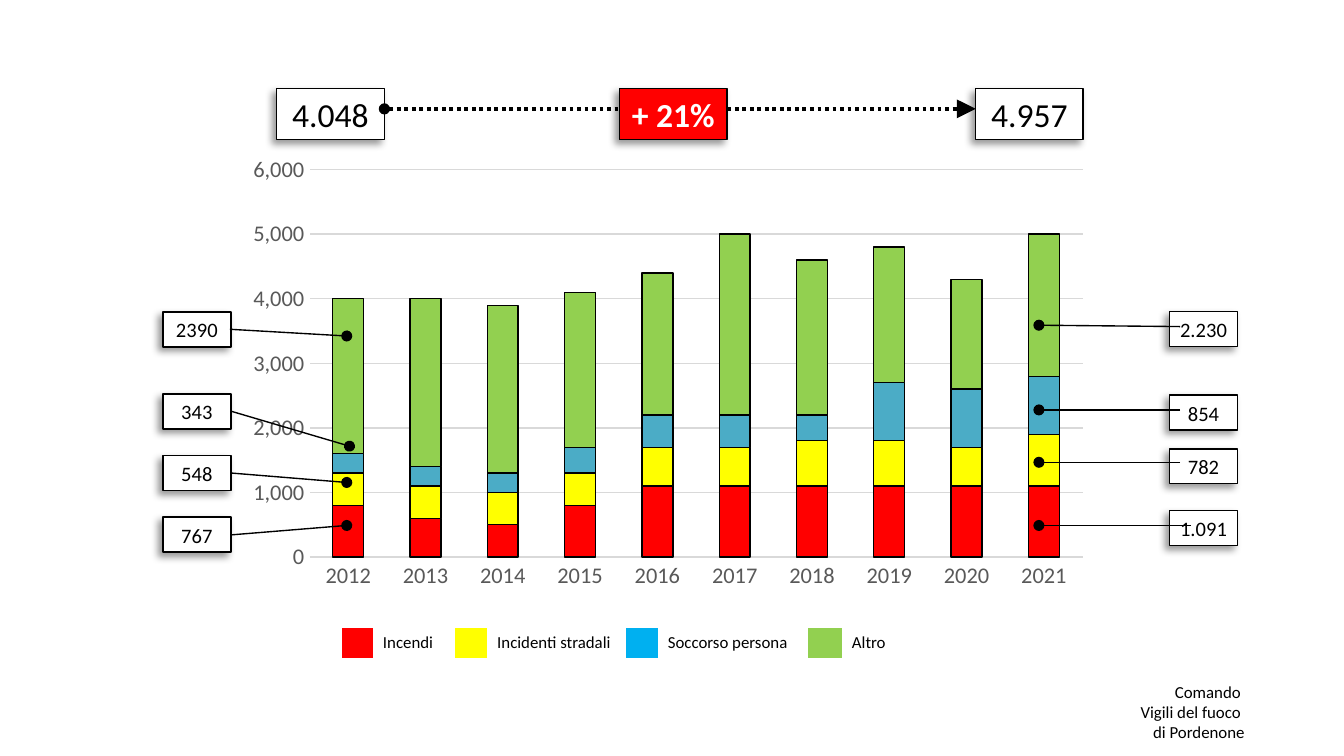
import pptx
import pptx.util
import pptx.chart.data
import pptx.dml.color
import pptx.enum.chart
import pptx.enum.dml
import pptx.enum.shapes
import pptx.enum.text
import pptx.oxml
import pptx.oxml.ns

Inches = pptx.util.Inches
Pt = pptx.util.Pt
RGBColor = pptx.dml.color.RGBColor
ALIGN = pptx.enum.text.PP_ALIGN
qn = pptx.oxml.ns.qn

FONT = "Calibri"
BLACK = RGBColor(0, 0, 0)
WHITE = RGBColor(255, 255, 255)
RED = RGBColor(255, 0, 0)
YELLOW = RGBColor(255, 255, 0)
TEAL = RGBColor(0x4B, 0xAC, 0xC6)
SKY = RGBColor(0x00, 0xB0, 0xF0)
GREEN = RGBColor(0x92, 0xD0, 0x50)
AXIS_TEXT = RGBColor(0x59, 0x59, 0x59)
GRID = RGBColor(0xD9, 0xD9, 0xD9)

YEARS = [str(year) for year in range(2012, 2022)]
INTERVENTIONS = [
    ("Series 1", RED, [800, 600, 500, 800, 1100, 1100, 1100, 1100, 1100, 1100]),
    ("Series 2", YELLOW, [500, 500, 500, 500, 600, 600, 700, 700, 600, 800]),
    ("Series 3", TEAL, [300, 300, 300, 400, 500, 500, 400, 900, 900, 900]),
    ("Series 4", GREEN, [2400, 2600, 2600, 2400, 2200, 2800, 2400, 2100, 1700, 2200]),
]
# Legend: label, colour, width of the colour cell, width of the label cell
LEGEND = [("Incendi", RED, 0.24, 0.6), ("Incidenti stradali", YELLOW, 0.25, 1.02),
          ("Soccorso persona", SKY, 0.25, 1.11), ("Altro", GREEN, 0.26, 1.56)]

# Callouts: text, box top, line start (x, y), dot (x, y)
CALLOUTS_2012 = [
    ("2390", 2.32, (1.71, 2.45), (2.58, 2.5)),
    ("343", 2.93, (1.72, 3.06), (2.6, 3.32)),
    ("548", 3.39, (1.72, 3.52), (2.58, 3.59)),
    ("767", 3.85, (1.72, 3.98), (2.58, 3.91)),
]
CALLOUTS_2021 = [
    ("2.230", 2.32, (8.78, 2.43), (7.73, 2.42)),
    ("854", 2.94, (8.78, 3.05), (7.73, 3.05)),
    ("782", 3.34, (8.78, 3.44), (7.73, 3.44)),
    ("1.091", 3.8, (8.86, 3.91), (7.73, 3.91)),
]


def style_font(font, size, color, bold=False):
    font.name, font.size, font.bold = FONT, Pt(size), bold
    font.color.rgb = color


def set_margins(holder):
    holder.margin_left = holder.margin_right = Inches(0.07)
    holder.margin_top = holder.margin_bottom = Inches(0.04)


def write_text(frame, text, size, color=BLACK, align=ALIGN.LEFT, bold=False):
    frame.text = text
    for paragraph in frame.paragraphs:
        paragraph.alignment = align
        for run in paragraph.runs:
            style_font(run.font, size, color, bold)


def add_chart(slide):
    data = pptx.chart.data.CategoryChartData()
    data.categories = YEARS
    for name, _, values in INTERVENTIONS:
        data.add_series(name, values)
    chart = slide.shapes.add_chart(
        pptx.enum.chart.XL_CHART_TYPE.COLUMN_STACKED,
        Inches(1.72), Inches(1.16), Inches(6.34), Inches(3.31), data).chart
    chart.has_legend = chart.has_title = False
    style_font(chart.font, 12, BLACK)

    plot = chart.plots[0]
    plot.overlap, plot.gap_width, plot.vary_by_categories = 100, 150, False
    for series, (_, color, _) in zip(plot.series, INTERVENTIONS):
        series.format.fill.solid()
        series.format.fill.fore_color.rgb = color
        series.format.line.color.rgb = BLACK
        series.format.line.width = Pt(0.75)

    # Axes
    years, counts = chart.category_axis, chart.value_axis
    for axis in (years, counts):
        style_font(axis.tick_labels.font, 12, AXIS_TEXT)
        axis.major_tick_mark = pptx.enum.chart.XL_TICK_MARK.NONE
        axis.minor_tick_mark = pptx.enum.chart.XL_TICK_MARK.NONE
    counts.minimum_scale, counts.maximum_scale, counts.major_unit = 0, 6000, 1000
    counts.tick_labels.number_format = "#,##0"
    counts.tick_labels.number_format_is_linked = False
    counts.format.line.fill.background()
    for line in (years.format.line, counts.major_gridlines.format.line):
        line.color.rgb = GRID
        line.width = Pt(0.75)

    # Position of the plot area inside the chart
    plot_area = plot._element.getparent()
    for old in plot_area.findall(qn("c:layout")):
        plot_area.remove(old)
    plot_area.insert(0, pptx.oxml.parse_xml(
        f'<c:layout {pptx.oxml.ns.nsdecls("c")}><c:manualLayout>'
        '<c:layoutTarget val="inner"/><c:xMode val="edge"/><c:yMode val="edge"/>'
        '<c:x val="0.097"/><c:y val="0.031"/><c:w val="0.908"/><c:h val="0.871"/>'
        '</c:manualLayout></c:layout>'))


def add_legend(slide):
    widths = [width for _, _, *pair in LEGEND for width in pair]
    table = slide.shapes.add_table(1, len(widths), Inches(2.54), Inches(4.67),
                                   Inches(sum(widths)), Inches(0.23)).table
    table.first_row = table.horz_banding = False
    for column, width in zip(table.columns, widths):
        column.width = Inches(width)
    for i, (label, color, *_) in enumerate(LEGEND):
        for col, text, fill in ((2 * i, "", color), (2 * i + 1, label, WHITE)):
            cell = table.cell(0, col)
            set_margins(cell)
            cell.fill.solid()
            cell.fill.fore_color.rgb = fill
            write_text(cell.text_frame, text, 9)
            # Keeps the colour cells as low as the label cells
            end = cell.text_frame.paragraphs[0]._p.get_or_add_endParaRPr()
            end.set("sz", "900")


def add_box(slide, text, left, top, width, height, size,
            fill=WHITE, color=BLACK, bold=False, line_width=0.75):
    box = slide.shapes.add_shape(pptx.enum.shapes.MSO_SHAPE.RECTANGLE, Inches(left),
                                 Inches(top), Inches(width), Inches(height))
    box.fill.solid()
    box.fill.fore_color.rgb = fill
    box.line.color.rgb = BLACK
    box.line.width = Pt(line_width)
    box.shadow.inherit = False
    box._element.spPr.find(qn("a:effectLst")).append(pptx.oxml.parse_xml(
        f'<a:outerShdw {pptx.oxml.ns.nsdecls("a")} blurRad="{Pt(4)}" dist="{Pt(3)}" '
        'dir="8100000" algn="tr" rotWithShape="0"><a:srgbClr val="000000">'
        '<a:alpha val="40000"/></a:srgbClr></a:outerShdw>'))
    frame = box.text_frame
    set_margins(frame)
    frame.word_wrap = True
    frame.vertical_anchor = pptx.enum.text.MSO_ANCHOR.TOP
    write_text(frame, text, size, color, ALIGN.CENTER, bold)


def add_line(slide, start, end, tail, head=None, width=0.75, dash=None, tail_size="med"):
    line = slide.shapes.add_connector(pptx.enum.shapes.MSO_CONNECTOR.STRAIGHT,
                                      *map(Inches, start + end))
    line.line.color.rgb = BLACK
    line.line.width = Pt(width)
    if dash:
        line.line.dash_style = dash
    properties = line._element.spPr
    outline = properties.find(qn("a:ln"))
    for tag, kind, size in (("a:headEnd", head, "med"), ("a:tailEnd", tail, tail_size)):
        if kind:
            outline.append(pptx.oxml.parse_xml(
                f'<{tag} {pptx.oxml.ns.nsdecls("a")} type="{kind}" '
                f'w="{size}" len="{size}"/>'))
    properties.append(pptx.oxml.parse_xml(f'<a:effectLst {pptx.oxml.ns.nsdecls("a")}/>'))


def add_callouts(slide, callouts, left, line_width):
    for text, top, start, dot in callouts:
        add_box(slide, text, left, top, 0.51, 0.26, 11, line_width=line_width)
        add_line(slide, start, dot, "oval")


def add_signature(slide):
    frame = slide.shapes.add_textbox(Inches(7.73), Inches(5.03),
                                     Inches(1.6), Inches(0.53)).text_frame
    frame.word_wrap = True
    set_margins(frame)
    write_text(frame, "Comando \nVigili del fuoco \ndi Pordenone", 9, align=ALIGN.RIGHT)


def main():
    deck = pptx.Presentation()
    # Widescreen, 16:9
    deck.slide_width, deck.slide_height = Inches(10), Inches(10) * 9 // 16
    slide = deck.slides.add_slide(deck.slide_layouts[6])

    add_chart(slide)
    add_legend(slide)

    # Growth from 2012 to 2021
    add_box(slide, "4.048", 2.06, 0.66, 0.8, 0.38, 18)
    add_box(slide, "4.957", 7.26, 0.66, 0.8, 0.38, 18)
    add_line(slide, (2.86, 0.81), (7.26, 0.81), "triangle", "oval", 2,
             pptx.enum.dml.MSO_LINE.ROUND_DOT, "lg")
    add_box(slide, "+ 21%", 4.61, 0.66, 0.8, 0.38, 18, RED, WHITE, True)

    # Values of the first and last year
    add_callouts(slide, CALLOUTS_2012, 1.21, 1)
    add_callouts(slide, CALLOUTS_2021, 8.7, 0.75)

    add_signature(slide)
    deck.save("out.pptx")


if __name__ == "__main__":
    main()
